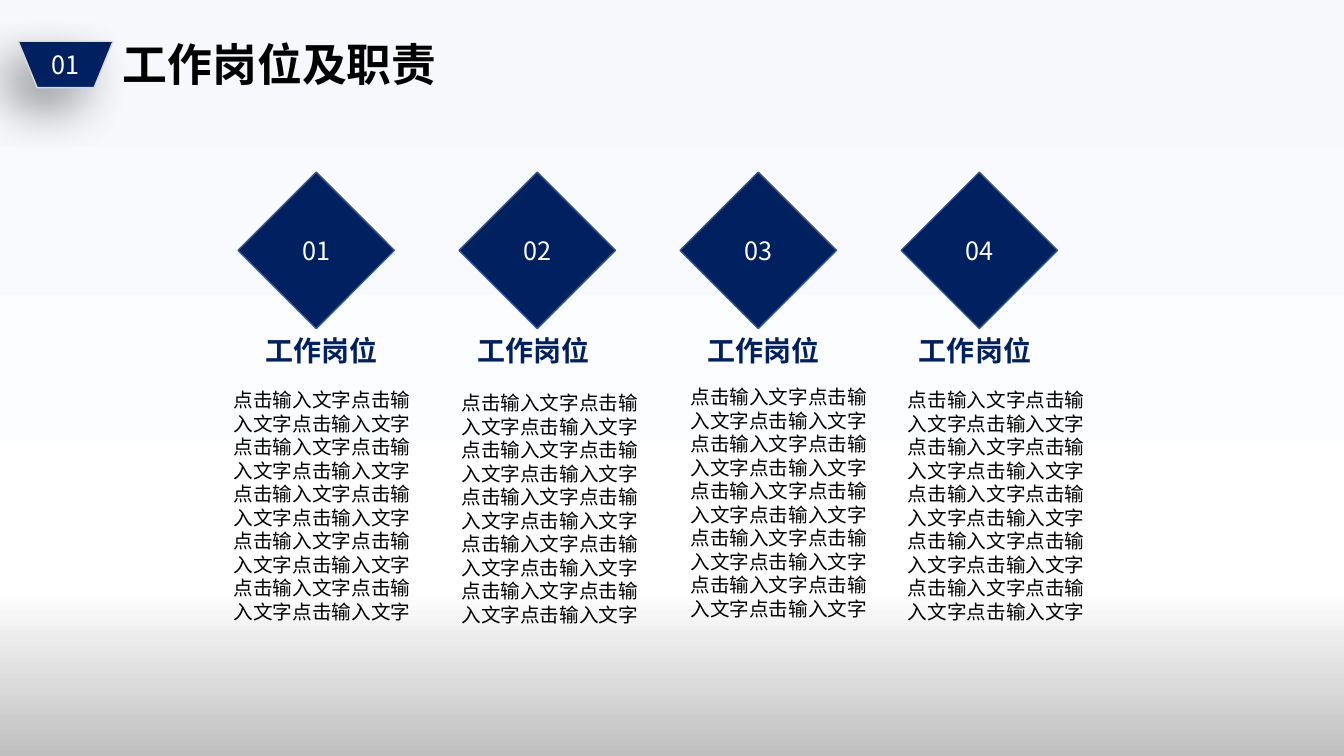
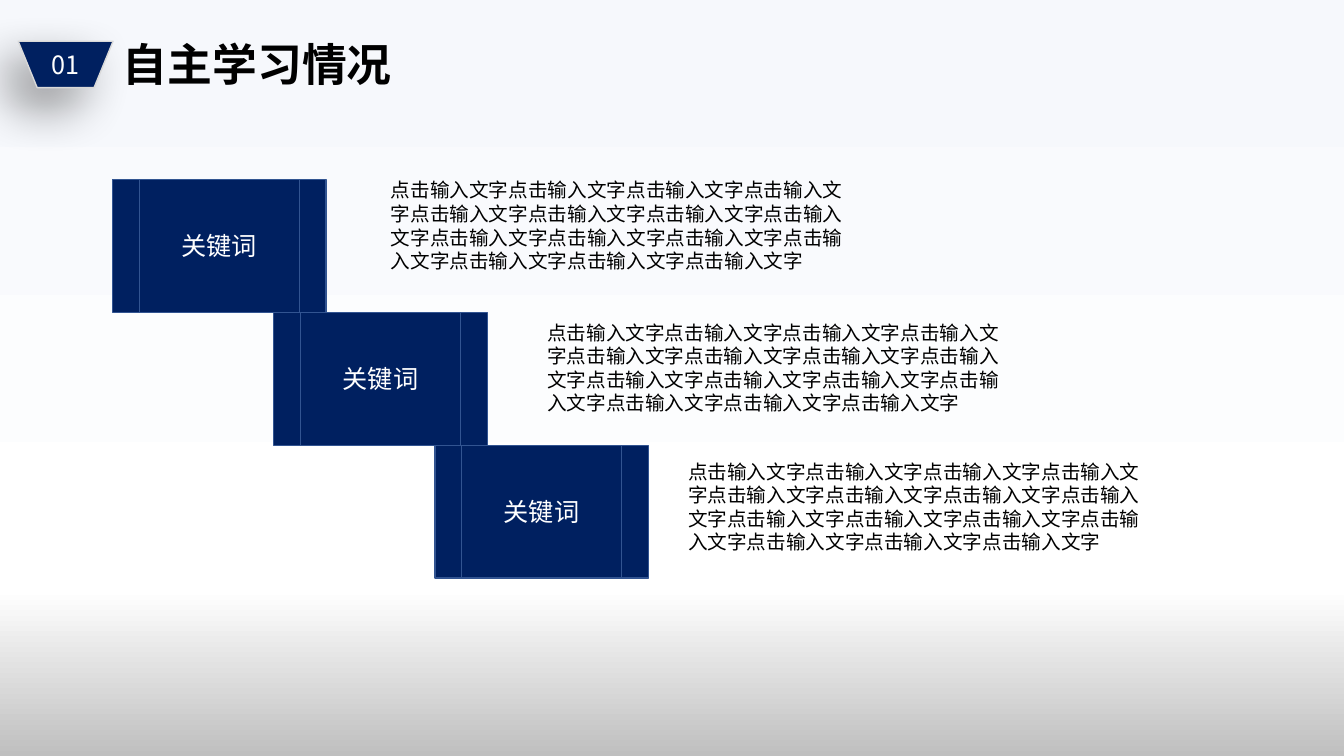
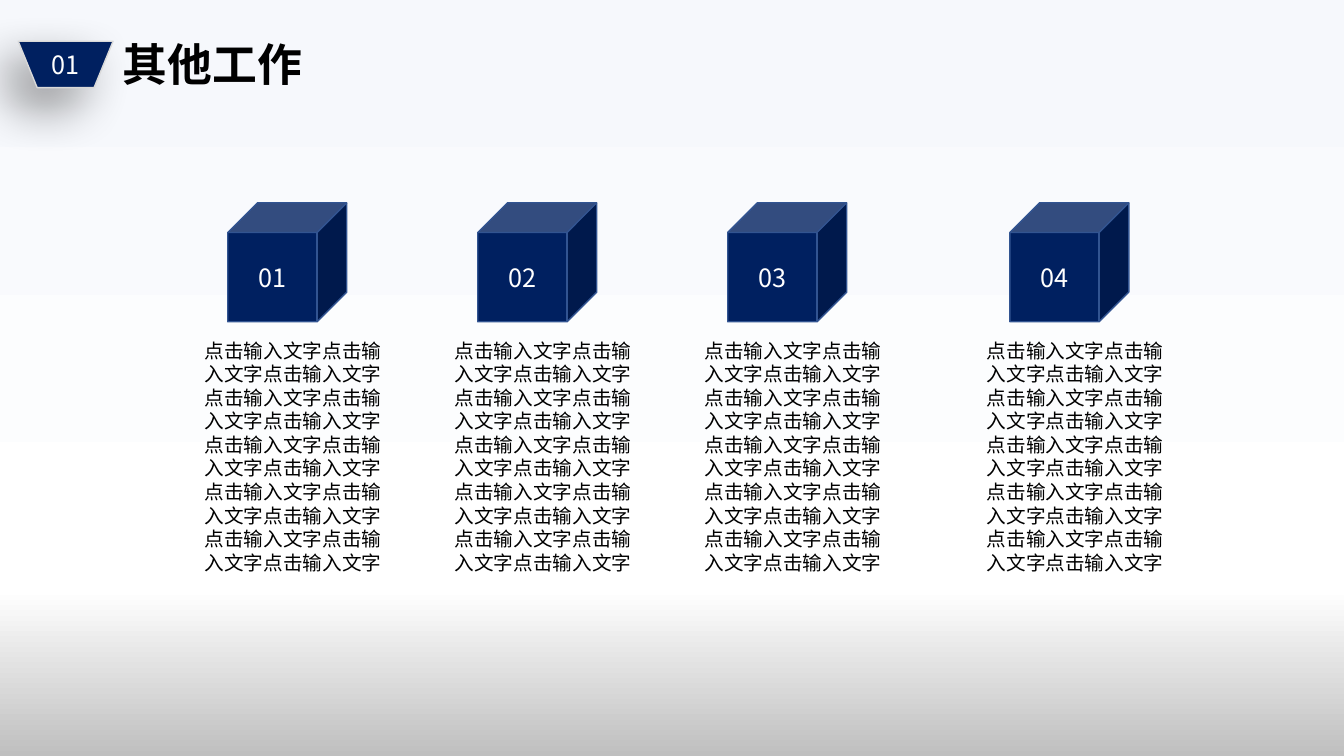
from copy import deepcopy

from lxml import etree
from pptx import Presentation
from pptx.dml.color import RGBColor
from pptx.enum import shapes, text
from pptx.oxml.ns import qn
from pptx.util import Cm, Pt

FONT = "Noto Sans CJK SC"
NAVY, EDGE, BLACK, WHITE, SILVER = "002060", "325491", "000000", "FFFFFF", "D9D9D9"
BACKDROP = [(0, "F6F8FC"), (0.78, "FFFFFF"), (1, "BFBFBF")]
FILLER = "点击输入文字" * 15
SHAPE = shapes.MSO_SHAPE
LEFT, CENTER = text.PP_ALIGN.LEFT, text.PP_ALIGN.CENTER


def rgb(color):
    return RGBColor.from_string(color)


class Deck:
    """Holds the shared style and the current slide."""

    def __init__(self):
        self.prs = Presentation()
        self.prs.slide_width, self.prs.slide_height = Cm(33.87), Cm(19.05)
        self.s = None
        self.backdrop()

    def backdrop(self):
        """Vertical gradient on the master, shared by all slides."""
        master = self.prs.slide_master
        fill = master.background.fill
        fill.gradient()
        fill.gradient_angle = 270
        stops = master.element.find(".//" + qn("a:gsLst"))
        stops.append(deepcopy(stops[-1]))
        for stop, (position, color) in zip(fill.gradient_stops, BACKDROP):
            stop.position = position
            stop.color.rgb = rgb(color)

    def set_text(self, sp, words, size, color, bold=False, align=LEFT,
                 anchor=text.MSO_ANCHOR.TOP):
        tf = sp.text_frame
        tf.word_wrap = True
        tf.vertical_anchor = anchor
        p = tf.paragraphs[0]
        p.text, p.alignment = words, align
        font = p.font
        font.name, font.size, font.bold = FONT, Pt(size), bold
        font.color.rgb = rgb(color)
        # East Asian typeface, next to the Latin one
        latin = p._p.find(".//" + qn("a:latin"))
        latin.addnext(etree.Element(qn("a:ea"), typeface=FONT))

    def slide(self, title):
        """New slide with its title and number badge."""
        self.s = self.prs.slides.add_slide(self.prs.slide_layouts[5])
        sp = self.s.shapes.title
        sp.left, sp.top, sp.width, sp.height = Cm(2.84), Cm(0.81), Cm(10.67), Cm(1.63)
        self.set_text(sp, title, 32, BLACK, bold=True)
        sp.text_frame.auto_size = text.MSO_AUTO_SIZE.SHAPE_TO_FIT_TEXT
        badge = self.shape(SHAPE.FLOWCHART_MANUAL_OPERATION, 0.46, 1.04, 2.39, 1.17,
                           "01", line=SILVER)
        self.shadow(badge)

    def shape(self, kind, x, y, w, h, words, line=EDGE):
        sp = self.s.shapes.add_shape(kind, Cm(x), Cm(y), Cm(w), Cm(h))
        sp.shadow.inherit = False
        sp.fill.solid()
        sp.fill.fore_color.rgb = rgb(NAVY)
        sp.line.color.rgb = rgb(line)
        sp.line.width = Pt(1)
        self.set_text(sp, words, 18, WHITE, align=CENTER, anchor=text.MSO_ANCHOR.MIDDLE)
        return sp

    def shadow(self, sp):
        """Soft shadow to the lower left."""
        effects = sp._element.spPr.find(qn("a:effectLst"))
        outer = etree.SubElement(effects, qn("a:outerShdw"), blurRad=str(Pt(35)),
                                 dist=str(Pt(20)), dir=str(135 * 60000),
                                 algn="tr", rotWithShape="0")
        color = etree.SubElement(outer, qn("a:srgbClr"), val=BLACK)
        etree.SubElement(color, qn("a:alpha"), val="40000")

    def textbox(self, x, y, w, h, words, size=14, color=BLACK, bold=False):
        sp = self.s.shapes.add_textbox(Cm(x), Cm(y), Cm(w), Cm(h))
        self.set_text(sp, words, size, color, bold)
        sp.text_frame.auto_size = text.MSO_AUTO_SIZE.SHAPE_TO_FIT_TEXT


def main():
    deck = Deck()

    # Posts: diamonds, each with a heading and a text
    deck.slide("工作岗位及职责")
    columns = [(6.43, 5.64, 9.65), (11.79, 11.38, 9.73),
               (17.58, 17.15, 9.58), (22.91, 22.63, 9.65)]
    for i, (heading_x, text_x, text_y) in enumerate(columns):
        deck.shape(SHAPE.DIAMOND, 6 + 5.57 * i, 4.34, 3.94, 3.94, f"{i + 1:02}")
        deck.textbox(heading_x, 8.28, 3.51, 1.12, "工作岗位", 20, NAVY, bold=True)
        deck.textbox(text_x, text_y, 5.13, 6.25, FILLER)

    # Learning: a staircase of keywords
    deck.slide("自主学习情况")
    step_w, step_h = 5.38, 3.35
    for i, (text_x, text_y) in enumerate([(9.6, 4.37), (13.54, 7.95), (17.09, 11.46)]):
        deck.shape(SHAPE.FLOWCHART_PREDEFINED_PROCESS, 2.84 + 4.06 * i,
                   4.52 + step_h * i, step_w, step_h, "关键词")
        deck.textbox(text_x, text_y, 12.12, 2.64, FILLER)

    # Other work: cubes above texts
    deck.slide("其他工作")
    for i, x in enumerate([5.74, 12.04, 18.34, 25.45]):
        deck.shape(SHAPE.CUBE, x, 5.11, 3, 3, f"{i + 1:02}")
        deck.textbox(x - 0.83, 8.41, 5.11, 6.25, FILLER)

    deck.prs.save("out.pptx")


if __name__ == "__main__":
    main()
